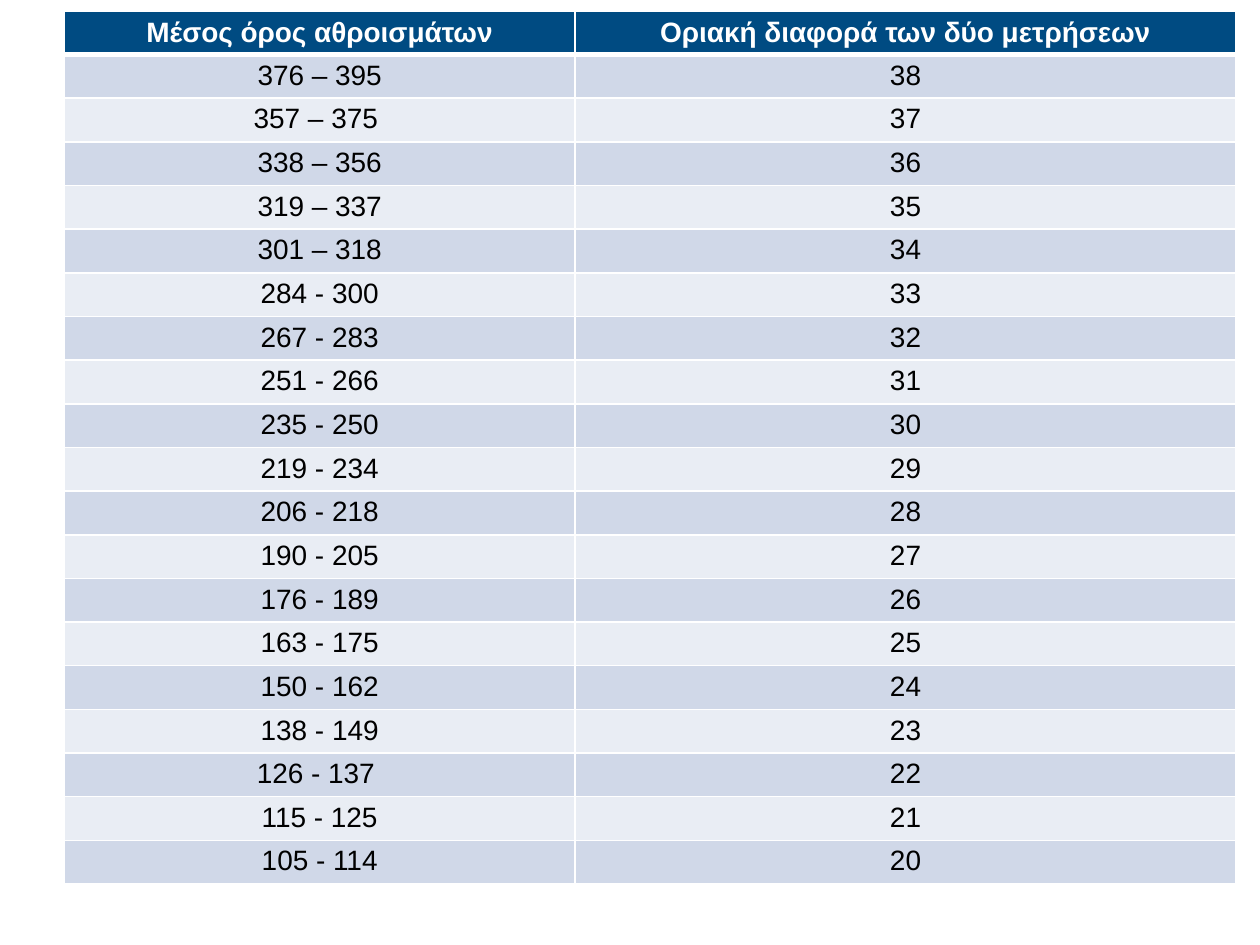
from dataclasses import dataclass

from lxml import etree
from pptx import Presentation
from pptx.dml.color import RGBColor
from pptx.enum.text import MSO_ANCHOR, PP_ALIGN
from pptx.oxml.ns import qn
from pptx.table import Table, _Cell
from pptx.util import Cm, Pt

CENTER = PP_ALIGN.CENTER
TOP = MSO_ANCHOR.TOP
MIDDLE = MSO_ANCHOR.MIDDLE


@dataclass(frozen=True)
class Theme:
    font: str = "Arial"
    size: int = 16
    head: str = "004B82"
    bands: tuple[str, str] = ("D0D8E8", "E9EDF4")
    light: str = "FFFFFF"
    dark: str = "000000"
    thin: int = 1
    thick: int = 3


@dataclass(frozen=True)
class Style:
    fill: str
    ink: str
    bold: bool
    anchor: MSO_ANCHOR
    top: int
    base: int


THEME = Theme()
HEADS = ("Μέσος όρος αθροισμάτων", "Οριακή διαφορά των δύο μετρήσεων")
RANGES = (
    "376 – 395", "357 – 375 ", "338 – 356", "319 – 337", "301 – 318",
    "284 - 300", "267 - 283", "251 - 266", "235 - 250", "219 - 234",
    "206 - 218", "190 - 205", "176 - 189", "163 - 175", "150 - 162",
    "138 - 149", "126 - 137 ", "115 - 125", "105 - 114",
)
FIRST_LIMIT = 38  # falls by one with each range
WIDTHS = (Cm(10.29), Cm(13.33))
ROW = Cm(0.88)


def add_edge(cell: _Cell, side: str, width: int) -> None:
    line = etree.SubElement(cell._tc.get_or_add_tcPr(), qn(f"a:ln{side}"), w=str(Pt(width)))
    fill = etree.SubElement(line, qn("a:solidFill"))
    etree.SubElement(fill, qn("a:srgbClr"), val=THEME.light)


def fill_cell(cell: _Cell, text: str, style: Style) -> None:
    edges = {"L": THEME.thin, "R": THEME.thin, "T": style.top, "B": style.base}
    for side, width in edges.items():
        add_edge(cell, side, width)
    cell.fill.solid()
    cell.fill.fore_color.rgb = RGBColor.from_string(style.fill)
    cell.margin_top = cell.margin_bottom = Cm(0.11)
    cell.vertical_anchor = style.anchor
    para = cell.text_frame.paragraphs[0]
    para.alignment = CENTER
    run = para.add_run()
    run.text = text
    run.font.name = THEME.font
    run.font.size = Pt(THEME.size)
    run.font.bold = style.bold
    run.font.color.rgb = RGBColor.from_string(style.ink)


def row_style(index: int) -> Style:
    if index == 0:
        return Style(THEME.head, THEME.light, True, MIDDLE, THEME.thin, THEME.thick)
    top = THEME.thick if index == 1 else THEME.thin
    return Style(THEME.bands[(index - 1) % 2], THEME.dark, False, TOP, top, THEME.thin)


def fill_table(table: Table, rows: list[tuple[str, str]]) -> None:
    table.first_row = table.horz_banding = False
    for column, width in zip(table.columns, WIDTHS):
        column.width = width
    for index, (row, texts) in enumerate(zip(table.rows, rows)):
        row.height = ROW
        for cell, text in zip(row.cells, texts):
            fill_cell(cell, text, row_style(index))


def main() -> None:
    deck = Presentation()
    deck.slide_width, deck.slide_height = Cm(25.4), Cm(19.05)
    slide = deck.slides.add_slide(deck.slide_layouts[6])
    limits = [(span, str(FIRST_LIMIT - step)) for step, span in enumerate(RANGES)]
    rows = [HEADS, *limits]
    frame = slide.shapes.add_table(
        len(rows), len(HEADS), Cm(1.3), Cm(0.22), sum(WIDTHS), ROW * len(rows)
    )
    fill_table(frame.table, rows)
    deck.save("out.pptx")


if __name__ == "__main__":
    main()
